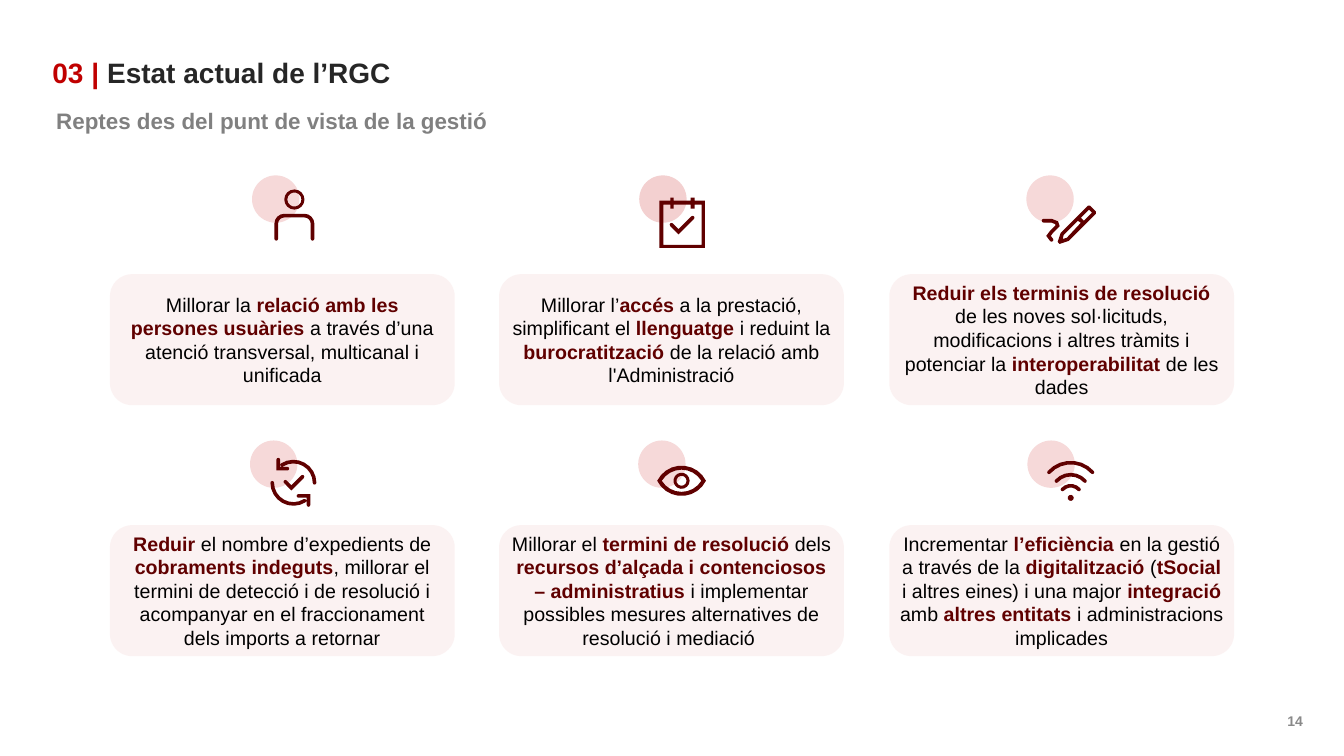
from math import acos, atan2, cos, degrees, pi, radians, remainder, sin, tau

from lxml.etree import SubElement as Sub
from pptx import Presentation
from pptx.dml.color import RGBColor as RGB
from pptx.enum.shapes import MSO_SHAPE as SHAPE
from pptx.enum.text import MSO_ANCHOR as ANCHOR, PP_ALIGN as ALIGN
from pptx.oxml.ns import qn
from pptx.util import Pt

PX = 9144
RED = RGB(0xC0, 0x00, 0x00)
WINE = RGB(0x60, 0x00, 0x00)
BLACK = RGB(0x00, 0x00, 0x00)
DARK = RGB(0x26, 0x26, 0x26)
GRAY = RGB(0x80, 0x80, 0x80)
PALE = RGB(0x89, 0x89, 0x89)
PINK = RGB(0xF6, 0xD9, 0xD9)
ROSE = RGB(0xE0, 0x80, 0x80)
BLUSH = RGB(0xF9, 0xE6, 0xE6)


def put(frame, text, size=14, color=BLACK, accent=WINE, bold=False,
        align=ALIGN.LEFT, pad=(10, 5, 10, 5), after=0):
    """Fill a frame with one paragraph; parts between asterisks are bold in the accent colour."""
    frame.word_wrap = True
    frame.vertical_anchor = ANCHOR.MIDDLE
    (frame.margin_left, frame.margin_top,
     frame.margin_right, frame.margin_bottom) = [n * PX for n in pad]
    para = frame.paragraphs[0]
    para.alignment = align
    para.space_after = Pt(after)
    for i, part in enumerate(text.split("*")):
        if part:
            run = para.add_run()
            run.text = part
            font = run.font
            font.name, font.size = "Arial", Pt(size)
            font.bold = bold or i % 2 == 1
            font.color.rgb = accent if i % 2 else color


def arc(x, y, r, start, end):
    """Return points along a circle between two angles in degrees."""
    steps = max(2, round(abs(end - start) * r ** 0.5 / 70))
    turns = [radians(start + (end - start) * i / steps) for i in range(steps + 1)]
    return [(x + r * cos(t), y + r * sin(t)) for t in turns]


def ring(x, y, *radii):
    """Return one round outline per radius."""
    return [arc(x, y, r, 0, 360)[:-1] for r in radii]


def pen(*line, half=1.8):
    """Return the outline of a thick line with round ends."""
    out = []
    for side in (line, line[::-1]):
        dirs = [atan2(d - b, c - a) for (a, b), (c, d) in zip(side, side[1:])]
        for (x, y), a, b in zip(side, dirs[:1] + dirs, dirs + dirs[-1:]):
            bend = remainder(b - a, tau) / 2
            r, way = half / cos(bend), a + bend - pi / 2
            out.append((x + r * cos(way), y + r * sin(way)))
        x, y = side[-1]
        tip = degrees(dirs[-1])
        out += arc(x, y, half, tip - 45, tip + 45)
    return out


def page(left, right, top, tip, low):
    """Return a calendar outline with two tabs on its top edge."""
    edge = [(left, top)]
    for a, b in ((665, 668), (685, 689)):
        edge += [(a, top), (a, tip), (b, tip), (b, top)]
    return edge + [(right, top), (right, low), (left, low)]


def lens(x, y, r, gap=12):
    """Return an eye outline made of two arcs."""
    a = degrees(acos(gap / r))
    return arc(x, y + gap, r, 270 - a, 270 + a) + arc(x, y - gap, r, 90 - a, 90 + a)[1:-1]


class Deck:
    """Hold the style and the current slide."""

    def __init__(self):
        """Start a deck with one blank slide."""
        self.prs = Presentation()
        self.prs.slide_width, self.prs.slide_height = 1333 * PX, 750 * PX
        self.shapes = self.prs.slides.add_slide(self.prs.slide_layouts[6]).shapes

    def text(self, x, y, w, h, text, **form):
        """Add a text box."""
        box = self.shapes.add_textbox(*[n * PX for n in (x, y, w, h)])
        put(box.text_frame, text, **form)

    def paint(self, shape, color, alpha=100):
        """Give a shape a plain fill, or none, without line or shadow."""
        shape.shadow.inherit = False
        shape.line.fill.background()
        if color is None:
            shape.fill.background()
            return
        shape.fill.solid()
        shape.fill.fore_color.rgb = color
        if alpha < 100:
            tone = next(shape._element.spPr.iter(qn("a:srgbClr")))
            Sub(tone, qn("a:alpha")).set("val", str(alpha * 1000))

    def card(self, x, y, w, h, text, fill=None, alpha=100, bend=0.17, **form):
        """Add a rounded rectangle with text."""
        box = self.shapes.add_shape(SHAPE.ROUNDED_RECTANGLE,
                                    *[n * PX for n in (x, y, w, h)])
        box.adjustments[0] = bend
        self.paint(box, fill, alpha)
        put(box.text_frame, text, **form)

    def icon(self, x, y, *parts, color=PINK, alpha=100):
        """Add a group with a disc and the outlines of each icon part."""
        group = self.shapes.add_group_shape().shapes
        disc = group.add_shape(SHAPE.OVAL, x * PX, y * PX, 47 * PX, 47 * PX)
        self.paint(disc, color, alpha)
        for part in parts:
            first, *rest = [[(a * PX, b * PX) for a, b in line] for line in part]
            form = group.build_freeform(*first[0], scale=1.0)
            form.add_line_segments(first[1:], close=True)
            for line in rest:
                form.move_to(*line[0])
                form.add_line_segments(line[1:], close=True)
            self.paint(form.convert_to_shape(), WINE)


CARDS = [
    "Millorar la *relació amb les persones usuàries *a través d’una atenció "
    "transversal, multicanal i unificada",
    "Millorar l’*accés *a la prestació, simplificant el *llenguatge *i reduint la "
    "*burocratització *de la relació amb l'Administració",
    "*Reduir els terminis de resolució *de les noves sol·licituds, modificacions i "
    "altres tràmits i potenciar la *interoperabilitat* de les dades",
    "*Reduir *el nombre d’expedients de *cobraments indeguts*, millorar el termini de "
    "detecció i de resolució i acompanyar en el fraccionament dels imports a retornar",
    "Millorar el *termini de resolució *dels *recursos d’alçada i contenciosos – "
    "administratius *i implementar possibles mesures alternatives de resolució i mediació ",
    "Incrementar *l’eficiència *en la gestió a través de la *digitalització *(*tSocial *"
    "i altres eines) i una major *integració *amb *altres entitats *i administracions "
    "implicades",
]


def main():
    """Build the slide and save it."""
    deck = Deck()
    deck.text(52, 44, 1234, 55, "*03 | *Estat actual de l’RGC", size=20, color=DARK,
              accent=RED, bold=True, pad=(0, 5, 10, 5))
    deck.text(1265, 695, 37, 40, "14", size=10, color=PALE, bold=True, align=ALIGN.RIGHT)
    deck.card(46, 104, 934, 31, "Reptes des del punt de vista de la gestió", bend=0,
              size=16, color=GRAY, bold=True, pad=(10, 5, 24, 5))

    deck.icon(248, 437, [
        pen(*arc(291, 479, 21, 180, 58)), pen((296, 492), (306, 492), (306, 501)),
        pen(*arc(291, 479, 21, 0, -122)), pen((276, 456), (276, 465), (285, 465)),
        pen((283, 478), (289, 484), (300, 473))])

    body = pen((274, 237), *arc(282, 222, 8, 180, 270), *arc(302, 222, 8, 270, 360),
               (310, 237))
    deck.icon(250, 174, [*ring(292, 198, 10, 7), body])

    tick = pen((666, 223), (673, 230), (687, 216))
    deck.icon(634, 174, [page(654, 699, 199, 196, 246), page(658, 696, 203, 207, 243), tick],
              color=ROSE, alpha=37)

    curl = pen((1035, 219), (1043, 219), (1048, 221), (1049, 224), (1043, 230),
               (1040, 234), (1043, 238))
    pencil = [(1079, 204), (1081, 204), (1087, 210), (1087, 212), (1060, 239),
              (1051, 242), (1049, 240), (1052, 231)]
    shaft = [(1058, 236), (1054, 237), (1055, 233), (1069, 219), (1072, 221)]
    end = [(1075, 219), (1072, 216), (1080, 208), (1083, 211)]
    deck.icon(1018, 174, [curl], [pencil, shaft, end])

    deck.icon(633, 437, [lens(676, 477, 27), lens(676, 477, 23)], ring(676, 477, 8, 5))

    waves = [pen(*arc(1062, y, r, 222, 318)) for y, r in ((488, 29), (490, 19), (493, 11))]
    deck.icon(1019, 437, [*waves, *ring(1062, 494, 3)])

    for i, text in enumerate(CARDS):
        row, col = divmod(i, 3)
        deck.card(109 + 773 * col // 2, 272 + 249 * row, 342, 130, text, fill=BLUSH,
                  alpha=50, align=ALIGN.CENTER, pad=(4, 4, 4, 4), after=2)
    deck.prs.save("out.pptx")


if __name__ == "__main__":
    main()
